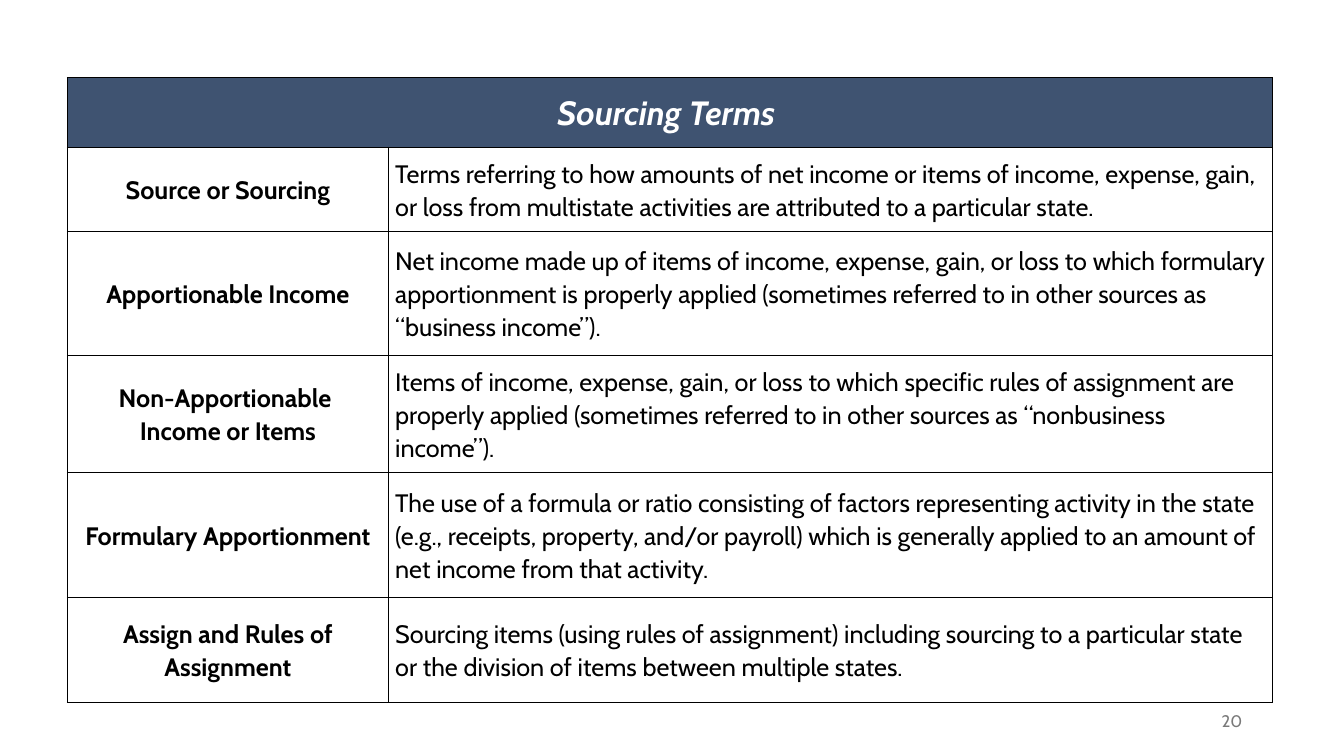
from lxml import etree
from pptx import Presentation
from pptx import util as u
from pptx.dml.color import RGBColor
from pptx.enum import text
from pptx.oxml import ns

FACE = "Cabin"
TITLE = "Sourcing Terms "
TERMS = [
    ("Source or Sourcing",
     "Terms referring to how amounts of net income or items of income, expense, gain, "
     "or loss from multistate activities are attributed to a particular state."),
    ("Apportionable Income",
     "Net income made up of items of income, expense, gain, or loss to which formulary "
     "apportionment is properly applied (sometimes referred to in other sources as "
     "“business income”)."),
    ("Non-Apportionable \vIncome or Items",
     "Items of income, expense, gain, or loss to which specific rules of assignment are "
     "properly applied (sometimes referred to in other sources as “nonbusiness income”)."),
    ("Formulary Apportionment",
     "The use of a formula or ratio consisting of factors representing activity in the "
     "state (e.g., receipts, property, and/or payroll) which is generally applied to an "
     "amount of net income from that activity."),
    ("Assign and Rules of Assignment",
     "Sourcing items (using rules of assignment) including sourcing to a particular state "
     "or the division of items between multiple states."),
]
COLS = [3.18, 8.77]
ROWS = [0.69, 0.84, 1.23, 1.16, 1.24, 1.04]
CELL = {"margin_left": u.Inches(0.07), "margin_right": u.Inches(0.07),
        "margin_top": 0, "margin_bottom": 0,
        "vertical_anchor": text.MSO_ANCHOR.MIDDLE}
LEFT, MID, RIGHT = text.PP_ALIGN.LEFT, text.PP_ALIGN.CENTER, text.PP_ALIGN.RIGHT


def color(code):
    return RGBColor.from_string(code)


def apply(item, values):
    for name, value in values.items():
        setattr(item, name, value)


def write(para, words, tint, para_form, font_form):
    para.text = words
    apply(para, para_form)
    for run in para.runs:
        apply(run.font, {"name": FACE, **font_form})
        run.font.color.rgb = color(tint)


def border(cell, tint="000000", width=1):
    props = cell._tc.get_or_add_tcPr()
    for side in "LRTB":
        line = etree.SubElement(props, ns.qn(f"a:ln{side}"), w=str(u.Pt(width)))
        fill = etree.SubElement(line, ns.qn("a:solidFill"))
        etree.SubElement(fill, ns.qn("a:srgbClr"), val=tint)


def fill_cell(cell, words, tint, align, **font):
    apply(cell, CELL)
    form = {"alignment": align, "line_spacing": 1.07, "space_after": u.Pt(6)}
    write(cell.text_frame.paragraphs[0], words, tint, form, font)


def terms(slide, left, top):
    """Table with a heading across both columns and one row per term."""
    box = [u.Inches(n) for n in (left, top, sum(COLS), sum(ROWS))]
    grid = slide.shapes.add_table(len(ROWS), len(COLS), *box).table
    for col, width in zip(grid.columns, COLS):
        col.width = u.Inches(width)
    for row, height in zip(grid.rows, ROWS):
        row.height = u.Inches(height)
    for cell in grid.iter_cells():
        border(cell)
        cell.fill.background()

    head = grid.cell(0, 0)
    head.merge(grid.cell(0, 1))
    head.fill.solid()
    head.fill.fore_color.rgb = color("3F5371")
    fill_cell(head, TITLE, "FFFFFF", MID, size=u.Pt(24), bold=True, italic=True)
    for row, (term, sense) in enumerate(TERMS, 1):
        for col, (words, align) in enumerate([(term, MID), (sense, LEFT)]):
            fill_cell(grid.cell(row, col), words, "000000", align,
                      size=u.Pt(18), bold=col == 0, italic=False)


def number(slide, left, top, width, height):
    box = [u.Inches(n) for n in (left, top, width, height)]
    frame = slide.shapes.add_textbox(*box).text_frame
    apply(frame, {"word_wrap": True, "vertical_anchor": text.MSO_ANCHOR.MIDDLE})
    write(frame.paragraphs[0], "20", "797979", {"alignment": RIGHT}, {"size": u.Pt(12)})


def main():
    deck = Presentation()
    apply(deck, {"slide_width": u.Inches(13.33), "slide_height": u.Inches(7.5)})
    slide = deck.slides.add_slide(deck.slide_layouts[6])
    terms(slide, 0.67, 0.77)
    number(slide, 9.42, 6.95, 3, 0.4)
    deck.save("out.pptx")


if __name__ == "__main__":
    main()
